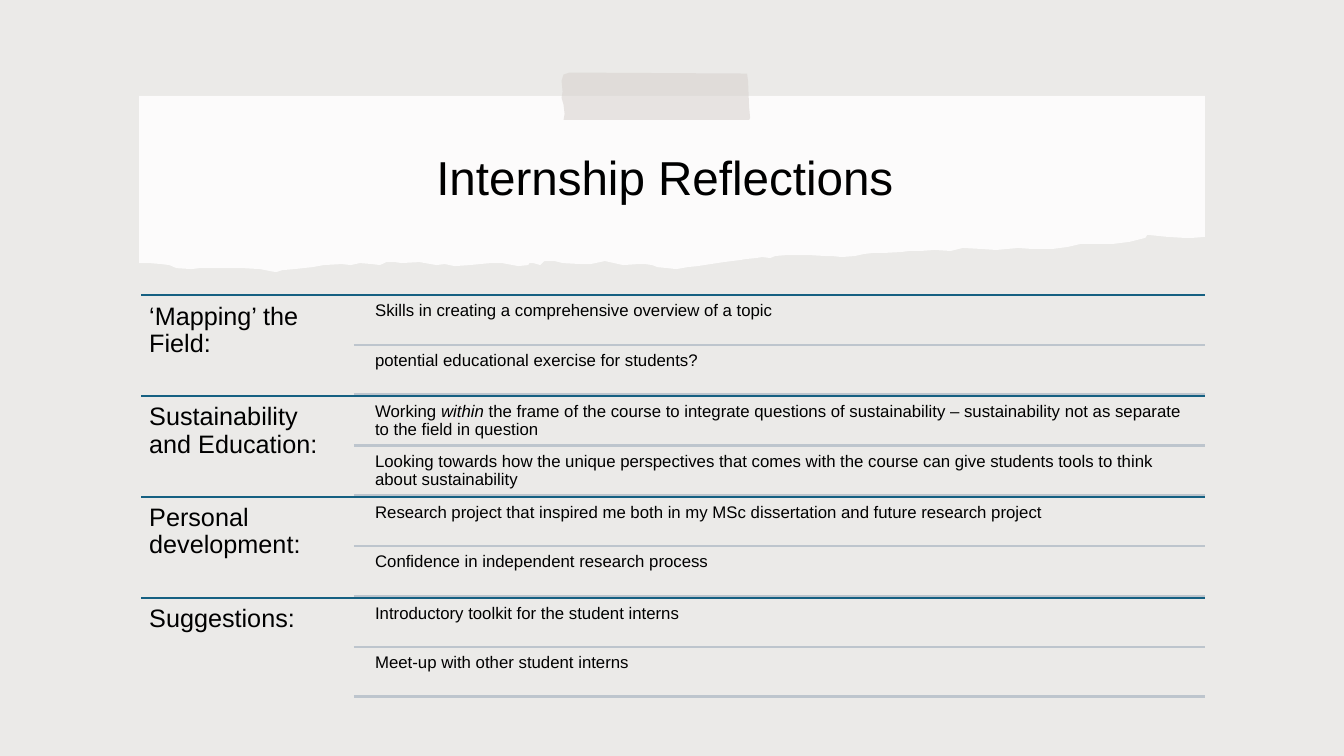
from lxml import etree
from pptx import Presentation
from pptx.dml.color import RGBColor
from pptx.enum.shapes import MSO_CONNECTOR as Connector, MSO_SHAPE as Shape
from pptx.enum.text import MSO_ANCHOR as Anchor, MSO_AUTO_SIZE as AutoSize, PP_ALIGN as Align
from pptx.oxml.ns import qn
from pptx.util import Inches, Pt

FONT = "Arial"
BACKGROUND = RGBColor(0xEB, 0xEA, 0xE8)
PAPER = RGBColor(0xFF, 0xFF, 0xFF)
TAPE = RGBColor(0xD9, 0xD4, 0xD0)
BLACK = RGBColor(0x00, 0x00, 0x00)
SECTION_LINE = RGBColor(0x15, 0x60, 0x82)
ITEM_LINE = RGBColor(0xBD, 0xC5, 0xCD)

LEFT, ITEM_LEFT, RIGHT = 1.4, 3.51, 11.95
SECTIONS_TOP, SECTION_HEIGHT, ITEM_HEIGHT = 2.93, 1.0, 0.49

PAPER_OUTLINE = [
    (138, 95), (1195, 95), (1195, 235), (1183, 236), (1174, 236), (1158, 235),
    (1138, 233), (1136, 236), (1120, 240), (1104, 242), (1089, 242), (1078, 242),
    (1072, 242), (1059, 245), (1044, 247), (1035, 247), (1023, 247), (1010, 246),
    (988, 248), (973, 247), (955, 246), (943, 249), (927, 248), (913, 249),
    (902, 249), (894, 250), (876, 251), (866, 251), (857, 252), (848, 254),
    (835, 255), (825, 254), (818, 254), (802, 253), (781, 253), (769, 254),
    (764, 256), (756, 255), (750, 256), (740, 257), (734, 258), (718, 260),
    (705, 262), (692, 264), (682, 265), (671, 267), (662, 266), (652, 265),
    (647, 263), (640, 262), (633, 262), (618, 263), (600, 259), (586, 262),
    (576, 262), (558, 261), (550, 259), (540, 259), (536, 263), (529, 261),
    (525, 261), (524, 263), (514, 264), (498, 261), (487, 261), (476, 262),
    (466, 263), (451, 264), (441, 262), (433, 263), (416, 260), (398, 261),
    (392, 260), (383, 260), (377, 263), (369, 262), (357, 261), (348, 263),
    (339, 262), (321, 263), (310, 265), (292, 267), (280, 268), (274, 270),
    (268, 269), (258, 267), (241, 266), (225, 266), (210, 266), (198, 266),
    (190, 267), (175, 266), (168, 263), (160, 262), (148, 261), (138, 261),
]
TAPE_OUTLINE = [
    (559, 74), (565, 72), (741, 73), (742, 81), (743, 106), (744, 117), (743, 119),
    (733, 119), (559, 119), (560, 113), (559, 104), (557, 97), (558, 91), (557, 80),
]

SECTIONS = [
    ("‘Mapping’ the Field:", [
        ["Skills in creating a comprehensive overview of a topic"],
        ["potential educational exercise for students?"]]),
    ("Sustainability and Education:", [
        ["Working ", "within", " the frame of the course to integrate questions of "
         "sustainability – sustainability not as separate to the field in question"],
        ["Looking towards how the unique perspectives that comes with the course "
         "can give students tools to think about sustainability"]]),
    ("Personal development:", [
        ["Research project that inspired me both in my MSc dissertation "
         "and future research project"],
        ["Confidence in independent research process"]]),
    ("Suggestions:", [
        ["Introductory toolkit for the student interns"],
        ["Meet-up with other student interns"]]),
]


def paint(shape, color):
    shape.shadow.inherit = False
    shape.fill.solid()
    shape.fill.fore_color.rgb = color
    shape.line.fill.background()


def add_backdrop(slide, width, height):
    backdrop = slide.shapes.add_shape(Shape.RECTANGLE, 0, 0, width, height)
    paint(backdrop, BACKGROUND)
    return backdrop


def add_outline(slide, points, color, opacity):
    builder = slide.shapes.build_freeform(*points[0], scale=Inches(0.01))
    builder.add_line_segments(points[1:], close=True)
    shape = builder.convert_to_shape()
    paint(shape, color)
    color_element = shape.element.spPr.find(qn("a:solidFill"))[0]
    etree.SubElement(color_element, qn("a:alpha"), val=str(opacity * 1000))
    return shape


def add_rule(slide, left, top, color):
    line = slide.shapes.add_connector(
        Connector.STRAIGHT, Inches(left), Inches(top), Inches(RIGHT), Inches(top))
    line.line.color.rgb = color
    line.line.width = Pt(1.5)
    etree.SubElement(line.element.spPr, qn("a:effectLst"))


def format_run(run, size):
    run.font.name = FONT
    run.font.size = Pt(size)
    run.font.color.rgb = BLACK


def add_text(slide, left, top, width, height, pieces, size, inset):
    box = slide.shapes.add_textbox(Inches(left), Inches(top), Inches(width), Inches(height))
    frame = box.text_frame
    frame.word_wrap = True
    frame.margin_left = frame.margin_right = Inches(inset)
    frame.margin_top = frame.margin_bottom = Inches(inset)
    paragraph = frame.paragraphs[0]
    paragraph.line_spacing = 0.9
    for index, piece in enumerate(pieces):
        run = paragraph.add_run()
        run.text = piece
        format_run(run, size)
        if index == 1:
            run.font.italic = True


def format_title(title):
    title.left, title.top = Inches(1.78), Inches(1.22)
    title.width, title.height = Inches(9.76), Inches(1.14)
    frame = title.text_frame
    frame.text = "Internship Reflections"
    frame.word_wrap = True
    frame.auto_size = AutoSize.NONE
    frame.vertical_anchor = Anchor.MIDDLE
    frame.margin_left, frame.margin_right = Inches(0.1), Inches(0.23)
    paragraph = frame.paragraphs[0]
    paragraph.alignment = Align.CENTER
    paragraph.line_spacing = 0.9
    format_run(paragraph.runs[0], 34)


def add_section(slide, top, heading, items):
    add_rule(slide, LEFT, top, SECTION_LINE)
    add_text(slide, LEFT, top, ITEM_LEFT - LEFT, SECTION_HEIGHT, [heading], 18, 0.08)
    for index, pieces in enumerate(items):
        item_top = top + 0.02 + index * ITEM_HEIGHT
        add_text(slide, 3.67, item_top, 8.28, 0.46, pieces, 12, 0.05)
        add_rule(slide, ITEM_LEFT, top + (index + 1) * ITEM_HEIGHT, ITEM_LINE)


def main():
    presentation = Presentation()
    presentation.slide_width = Inches(13.33)
    presentation.slide_height = Inches(7.5)
    slide = presentation.slides.add_slide(presentation.slide_layouts[5])

    title = slide.shapes.title
    format_title(title)
    backdrop = add_backdrop(slide, presentation.slide_width, presentation.slide_height)
    paper = add_outline(slide, PAPER_OUTLINE, PAPER, 85)
    for shape in (backdrop, paper):
        title.element.addprevious(shape.element)
    add_outline(slide, TAPE_OUTLINE, TAPE, 60)

    for index, (heading, items) in enumerate(SECTIONS):
        add_section(slide, SECTIONS_TOP + index * SECTION_HEIGHT, heading, items)
    presentation.save("out.pptx")


if __name__ == "__main__":
    main()
